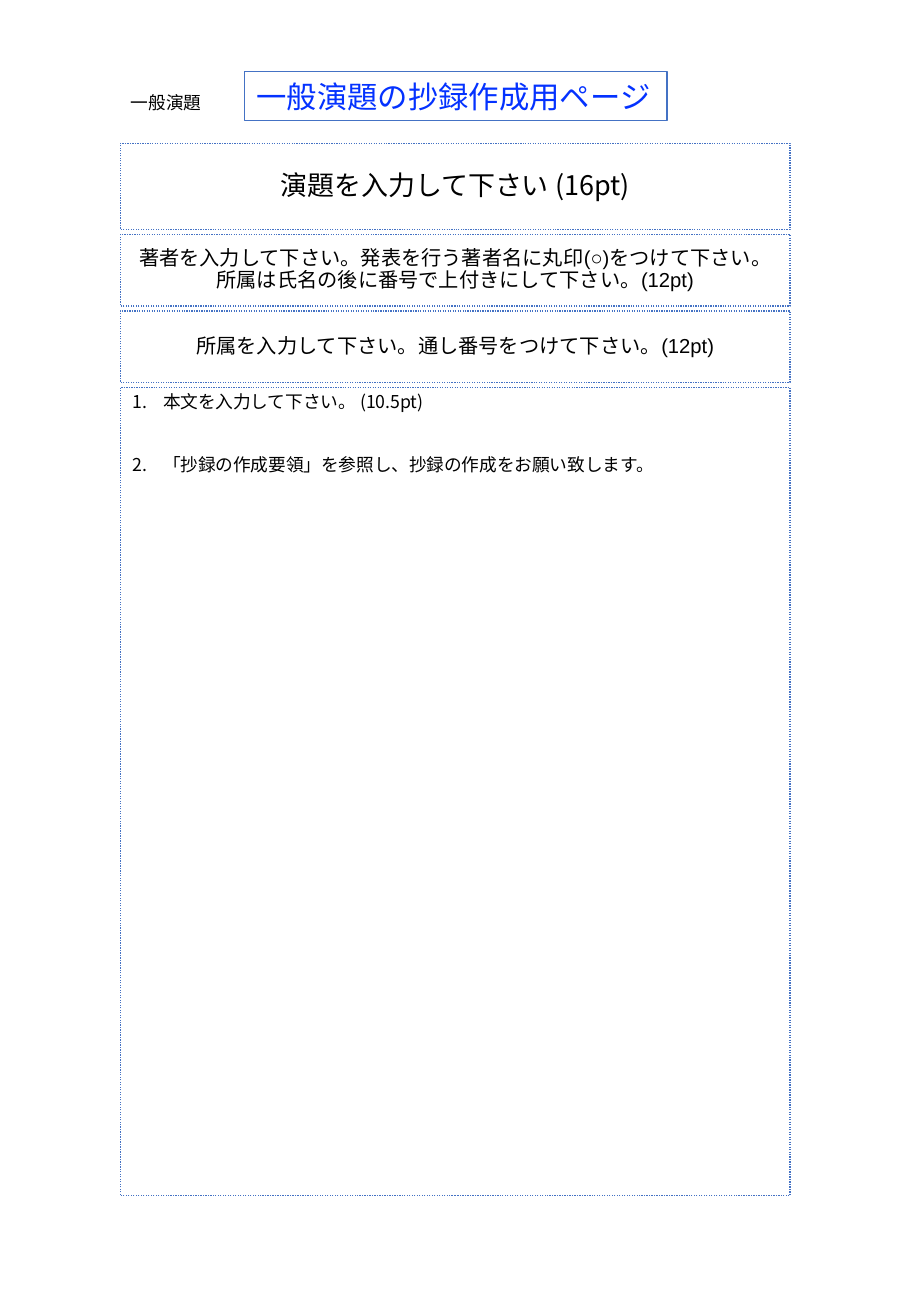
"""Build the abstract template page for general presentations."""
from dataclasses import dataclass, field

from lxml import etree
from pptx import Presentation
from pptx.dml.color import RGBColor
from pptx.enum.dml import MSO_LINE
from pptx.enum.shapes import MSO_SHAPE
from pptx.enum.text import MSO_ANCHOR, MSO_AUTO_SIZE, PP_ALIGN
from pptx.oxml.ns import qn
from pptx.slide import Slide
from pptx.util import Cm, Pt

RECTANGLE = MSO_SHAPE.RECTANGLE
DOTTED, SOLID = MSO_LINE.ROUND_DOT, MSO_LINE.SOLID
TOP, MIDDLE = MSO_ANCHOR.TOP, MSO_ANCHOR.MIDDLE
LEFT, CENTER = PP_ALIGN.LEFT, PP_ALIGN.CENTER
FIT_SHAPE, FIXED = MSO_AUTO_SIZE.SHAPE_TO_FIT_TEXT, MSO_AUTO_SIZE.NONE


@dataclass(frozen=True)
class Theme:
    """Colours, fonts and type sizes of the page."""
    black: RGBColor = RGBColor(0x00, 0x00, 0x00)
    heading: RGBColor = RGBColor(0x04, 0x32, 0xFF)
    border: RGBColor = RGBColor(0x44, 0x72, 0xC4)
    border_width: float = 0.75
    label_font: str = "Calibri"
    author_font: str = "Arial"
    japanese_font: str = "Noto Sans CJK JP"
    heading_size: float = 18
    title_size: float = 16
    author_size: float = 12
    body_size: float = 10.5
    line_spacing: float = 0.9
    item_gap: float = 26
    item_indent: float = 0.64


THEME = Theme()


@dataclass(frozen=True)
class Box:
    """A text box with its place in centimetres and its formats."""
    left: float
    top: float
    width: float
    height: float
    lines: list[str]
    font: str
    size: float
    color: RGBColor = THEME.black
    border: MSO_LINE | None = None
    numbered: bool = False
    frame: dict = field(default_factory=dict)
    paragraph: dict = field(default_factory=dict)


@dataclass(frozen=True)
class Field:
    """An entry field of the form, stacked below the one before it."""
    height: float
    lines: list[str]
    font: str
    size: float
    numbered: bool = False


FIELD_LEFT, FIELD_TOP, FIELD_WIDTH, FIELD_GAP = 2.52, 3.0, 14.0, 0.1
ONE_LINE = {"word_wrap": False, "auto_size": FIT_SHAPE, "vertical_anchor": TOP}
FIELDS = [
    Field(1.8, ["演題を入力して下さい (16pt)"], THEME.japanese_font, THEME.title_size),
    Field(1.5, ["著者を入力して下さい。発表を行う著者名に丸印(○)をつけて下さい。"
                "所属は氏名の後に番号で上付きにして下さい。(12pt)"],
          THEME.author_font, THEME.author_size),
    Field(1.5, ["所属を入力して下さい。通し番号をつけて下さい。(12pt)"],
          THEME.author_font, THEME.author_size),
    Field(16.9, ["本文を入力して下さい。 (10.5pt)",
                 "「抄録の作成要領」を参照し、抄録の作成をお願い致します。"],
          THEME.japanese_font, THEME.body_size, numbered=True),
]
LABEL = Box(2.49, 1.8, 2.08, 0.74, ["一般演題"], THEME.label_font, THEME.body_size,
            frame=ONE_LINE, paragraph={"alignment": LEFT})
HEADING = Box(5.11, 1.5, 8.84, 1.02, ["一般演題の抄録作成用ページ"], THEME.label_font,
              THEME.heading_size, THEME.heading, SOLID,
              frame=ONE_LINE, paragraph={"alignment": LEFT})


def apply(target: object, formats: dict) -> None:
    """Set every format value on the target."""
    for name, value in formats.items():
        setattr(target, name, value)


def stack_fields(fields: list[Field]) -> list[Box]:
    """Place the entry fields below one another at equal gaps."""
    boxes, top = [], FIELD_TOP
    for entry in fields:
        boxes.append(Box(
            FIELD_LEFT, top, FIELD_WIDTH, entry.height, entry.lines, entry.font, entry.size,
            border=DOTTED, numbered=entry.numbered,
            frame={"word_wrap": True, "auto_size": FIXED,
                   "vertical_anchor": TOP if entry.numbered else MIDDLE},
            paragraph={"alignment": LEFT if entry.numbered else CENTER,
                       "line_spacing": THEME.line_spacing}))
        top += entry.height + FIELD_GAP
    return boxes


def draw_box(slide: Slide, box: Box) -> None:
    """Draw one box with its border and text."""
    place = [Cm(length) for length in (box.left, box.top, box.width, box.height)]
    if box.border is None:
        shape = slide.shapes.add_textbox(*place)
    else:
        shape = slide.shapes.add_shape(RECTANGLE, *place)
        shape.shadow.inherit = False
        shape.fill.background()
        shape.line.color.rgb = THEME.border
        apply(shape.line, {"width": Pt(THEME.border_width), "dash_style": box.border})
    apply(shape.text_frame, box.frame)
    for index, line in enumerate(box.lines):
        paragraph = shape.text_frame.add_paragraph() if index else shape.text_frame.paragraphs[0]
        apply(paragraph, box.paragraph)
        if index:
            paragraph.space_before = Pt(THEME.item_gap)
        if box.numbered:
            properties = paragraph._p.get_or_add_pPr()
            properties.set("marL", str(Cm(THEME.item_indent)))
            properties.set("indent", str(-Cm(THEME.item_indent)))
            etree.SubElement(properties, qn("a:buFont"), typeface=box.font)
            etree.SubElement(properties, qn("a:buAutoNum"), type="arabicPeriod")
        run = paragraph.add_run()
        run.text = line
        apply(run.font, {"name": box.font, "size": Pt(box.size)})
        run.font.color.rgb = box.color
        etree.SubElement(run._r.get_or_add_rPr(), qn("a:ea"), typeface=THEME.japanese_font)


def main() -> None:
    """Create the page and save it."""
    presentation = Presentation()
    apply(presentation, {"slide_width": Cm(19.05), "slide_height": Cm(27.51)})
    slide = presentation.slides.add_slide(presentation.slide_layouts[6])
    for box in [LABEL, *stack_fields(FIELDS), HEADING]:
        draw_box(slide, box)
    presentation.save("out.pptx")


if __name__ == "__main__":
    main()
